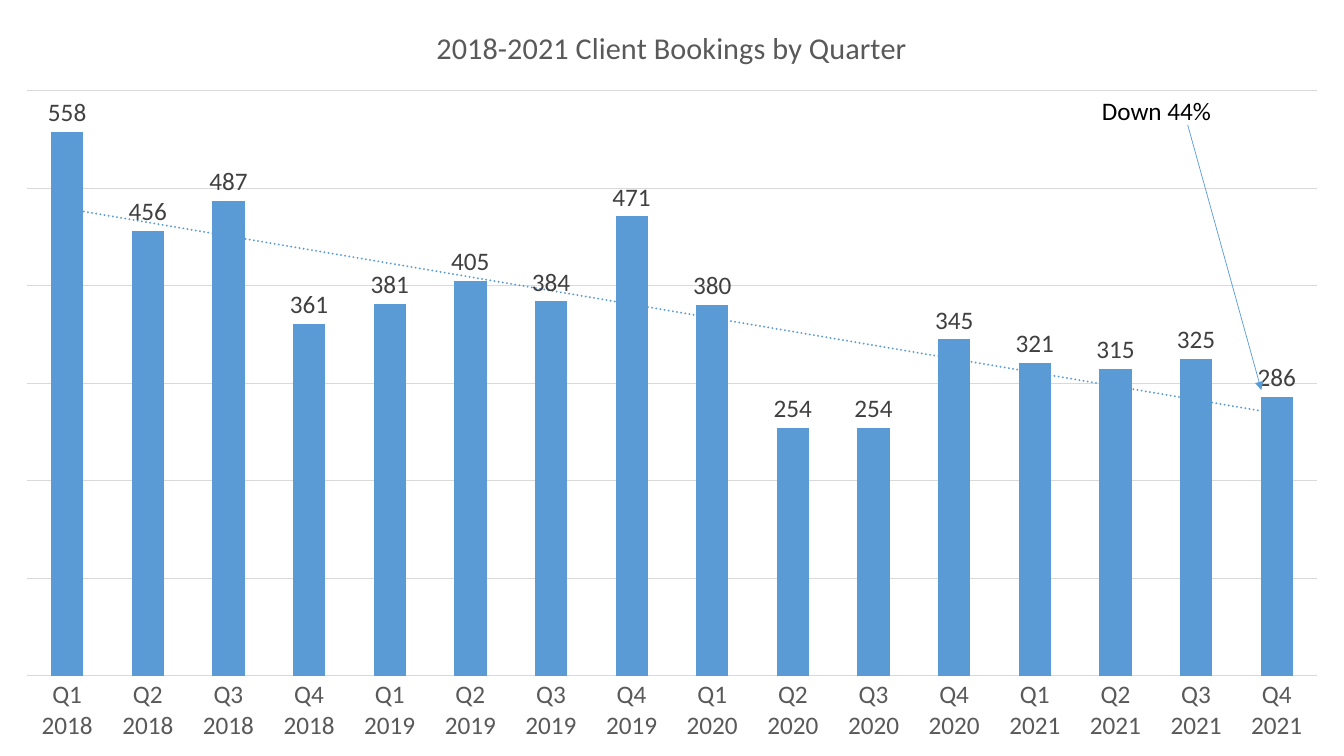
from lxml import etree
from pptx import Presentation
from pptx import util as u
from pptx.chart import data as cd
from pptx.dml import color
from pptx.enum import chart as ce, dml, shapes, text
from pptx.oxml import parse_xml
from pptx.oxml.ns import nsdecls, qn


def rgb(code):
    return color.RGBColor.from_string(code)


def style(font, code, size=18):
    look = {"name": "Calibri", "size": u.Pt(size), "bold": False}
    for key, val in look.items():
        setattr(font, key, val)
    font.color.rgb = rgb(code)


BLUE, GREY, RULE = "5B9BD5", "595959", "D9D9D9"

deck = Presentation()
deck.slide_width = u.Inches(13.33)
deck.slide_height = u.Inches(7.5)
slide = deck.slides.add_slide(deck.slide_layouts[6])

data = cd.CategoryChartData()
data.categories = [f"Q{q} {year}" for year in range(2018, 2022) for q in range(1, 5)]
data.add_series("Series 1", [558, 456, 487, 361, 381, 405, 384, 471,
                             380, 254, 254, 345, 321, 315, 325, 286])
frame = slide.shapes.add_chart(
    ce.XL_CHART_TYPE.COLUMN_CLUSTERED, 0, 0, deck.slide_width, deck.slide_height, data)
chart = frame.chart
chart.has_legend = False
style(chart.font, "000000")

chart.has_title = True
title = chart.chart_title
title.include_in_layout = False
title.text_frame.text = "2018-2021 Client Bookings by Quarter"
style(title.text_frame.paragraphs[0].runs[0].font, GREY, 21.6)

cat = chart.category_axis
cat.major_tick_mark = ce.XL_TICK_MARK.NONE
cat.has_major_gridlines = False
style(cat.tick_labels.font, GREY)

val = chart.value_axis
scale = {"visible": False, "minimum_scale": 0, "maximum_scale": 600,
         "major_unit": 100, "has_major_gridlines": True}
for key, num in scale.items():
    setattr(val, key, num)
for line in (cat.format.line, val.major_gridlines.format.line):
    line.color.rgb = rgb(RULE)
    line.width = u.Pt(0.75)

plot = chart.plots[0]
plot.gap_width = 150
plot.vary_by_categories = False
bars = plot.series[0]
bars.format.fill.solid()
bars.format.fill.fore_color.rgb = rgb(BLUE)
tags = bars.data_labels
tags.show_value = True
tags.position = ce.XL_LABEL_POSITION.OUTSIDE_END
style(tags.font, "404040")

trend = parse_xml(
    f'<c:trendline {nsdecls("c", "a")}><c:spPr><a:ln w="19050" cap="rnd">'
    f'<a:solidFill><a:srgbClr val="{BLUE}"/></a:solidFill><a:prstDash val="sysDot"/>'
    '</a:ln></c:spPr><c:trendlineType val="linear"/>'
    '<c:dispRSqr val="0"/><c:dispEq val="0"/></c:trendline>')
bars._element.find(qn("c:cat")).addprevious(trend)

area = chart._chartSpace.chart.plotArea
for old in area.findall(qn("c:layout")):
    area.remove(old)
layout = parse_xml(
    f'<c:layout {nsdecls("c")}><c:manualLayout><c:layoutTarget val="inner"/>'
    '<c:xMode val="edge"/><c:yMode val="edge"/><c:x val="0.02"/><c:y val="0.12"/>'
    '<c:w val="0.96"/><c:h val="0.774"/></c:manualLayout></c:layout>')
area.insert(0, layout)

note = slide.shapes.add_textbox(
    u.Inches(10.83), u.Inches(0.9), u.Inches(1.3), u.Inches(0.4))
note.text_frame.word_wrap = False
note.text_frame.auto_size = text.MSO_AUTO_SIZE.SHAPE_TO_FIT_TEXT
run = note.text_frame.paragraphs[0].add_run()
run.text = "Down 44%"
style(run.font, "000000")

arrow = slide.shapes.add_connector(
    shapes.MSO_CONNECTOR.STRAIGHT,
    u.Inches(11.78), u.Inches(1.24), u.Inches(12.51), u.Inches(3.87))
arrow.line.color.rgb = rgb(BLUE)
arrow.line.width = u.Pt(0.5)
etree.SubElement(arrow.line._get_or_add_ln(), qn("a:tailEnd"), type="triangle")
etree.SubElement(arrow._element.spPr, qn("a:effectLst"))

deck.save("out.pptx")
